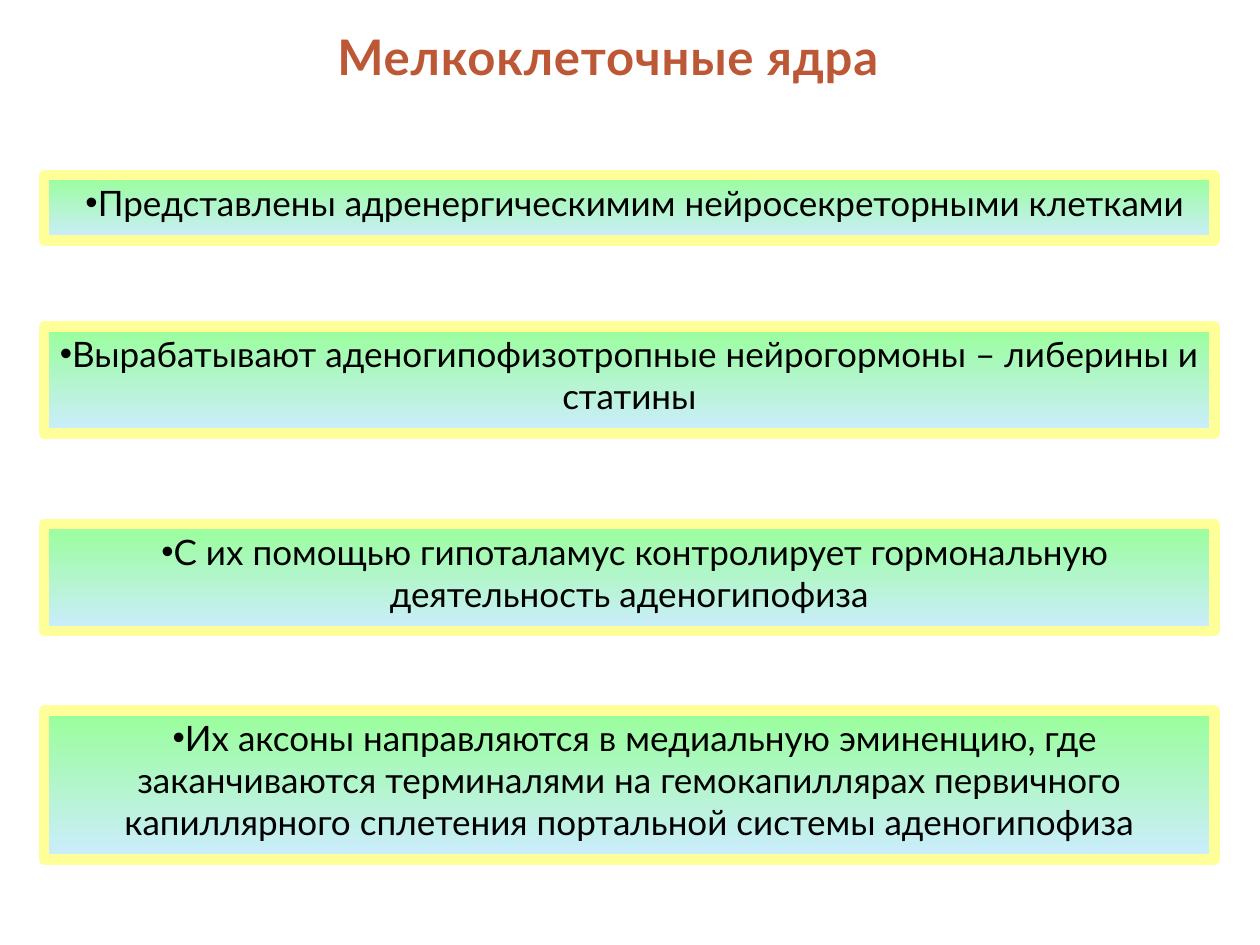
from pptx import Presentation
from pptx.dml.color import RGBColor
from pptx.enum.shapes import MSO_SHAPE
from pptx.enum.text import MSO_ANCHOR, PP_ALIGN
from pptx.oxml.ns import qn
from pptx.util import Inches, Pt
from lxml import etree

RECTANGLE = MSO_SHAPE.RECTANGLE
TOP = MSO_ANCHOR.TOP
LEFT, CENTER = PP_ALIGN.LEFT, PP_ALIGN.CENTER

COLORS = {
    "title": "BD5836",
    "text": "000000",
    "border": "FFFF99",
    "gradient_top": "99FF99",
    "gradient_bottom": "CCECFF",
}
TITLE_FONT = {"name": "Lato", "size": Pt(28), "bold": True}
BODY_FONT = {"name": "Lato", "size": Pt(20), "bold": False}

TITLE = "Мелкоклеточные ядра"
PANEL_LEFT, PANEL_WIDTH = 0.35, 9.29
PANELS = [
    (1.39, 0.52, 0.09, "Представлены адренергическимим нейросекреторными клетками"),
    (2.59, 0.85, 0, "Вырабатывают аденогипофизотропные нейрогормоны – либерины и статины"),
    (4.16, 0.85, 0.09, "С их помощью гипоталамус контролирует гормональную деятельность аденогипофиза"),
    (5.64, 1.18, 0.09, "Их аксоны направляются в медиальную эминенцию, где заканчиваются "
                       "терминалями на гемокапиллярах первичного капиллярного сплетения "
                       "портальной системы аденогипофиза"),
]


def color(name):
    """Return the named colour."""
    return RGBColor.from_string(COLORS[name])


def write_text(shape, text, alignment, font_values, color_name):
    """Write one formatted paragraph into a shape and return the paragraph."""
    frame = shape.text_frame
    frame.word_wrap = True
    frame.vertical_anchor = TOP
    paragraph = frame.paragraphs[0]
    paragraph.alignment = alignment
    run = paragraph.add_run()
    run.text = text
    for attribute, value in font_values.items():
        setattr(run.font, attribute, value)
    run.font.color.rgb = color(color_name)
    return paragraph


def add_bullet(paragraph, indent):
    """Give a paragraph a round bullet and a first-line indent."""
    properties = paragraph._p.get_or_add_pPr()
    properties.set("marL", "0")
    properties.set("indent", str(Inches(indent)))
    etree.SubElement(properties, qn("a:buFont")).set("typeface", "Arial")
    etree.SubElement(properties, qn("a:buChar")).set("char", "•")


def add_title(slide, left, top, width, height):
    """Place the slide title in the given box."""
    shape = slide.shapes.add_textbox(Inches(left), Inches(top), Inches(width), Inches(height))
    paragraph = write_text(shape, TITLE, LEFT, TITLE_FONT, "title")
    paragraph.runs[0].font._element.set("spc", "50")


def add_panel(slide, left, top, width, height, indent, text):
    """Place a bordered gradient panel with one bulleted statement."""
    shape = slide.shapes.add_shape(
        RECTANGLE, Inches(left), Inches(top), Inches(width), Inches(height))
    shape.shadow.inherit = False
    shape.fill.gradient()
    shape.fill.gradient_angle = 270
    for stop, name in zip(shape.fill.gradient_stops, ("gradient_top", "gradient_bottom")):
        stop.color.rgb = color(name)
    shape.line.color.rgb = color("border")
    shape.line.width = Pt(6)
    paragraph = write_text(shape, text, CENTER, BODY_FONT, "text")
    add_bullet(paragraph, indent)


def main():
    """Build and save the presentation."""
    presentation = Presentation()
    presentation.slide_width = Inches(10)
    presentation.slide_height = Inches(7.5)
    slide = presentation.slides.add_slide(presentation.slide_layouts[6])
    add_title(slide, 2.58, 0.16, 4.84, 0.57)
    for top, height, indent, text in PANELS:
        add_panel(slide, PANEL_LEFT, top, PANEL_WIDTH, height, indent, text)
    presentation.save("out.pptx")


if __name__ == "__main__":
    main()
